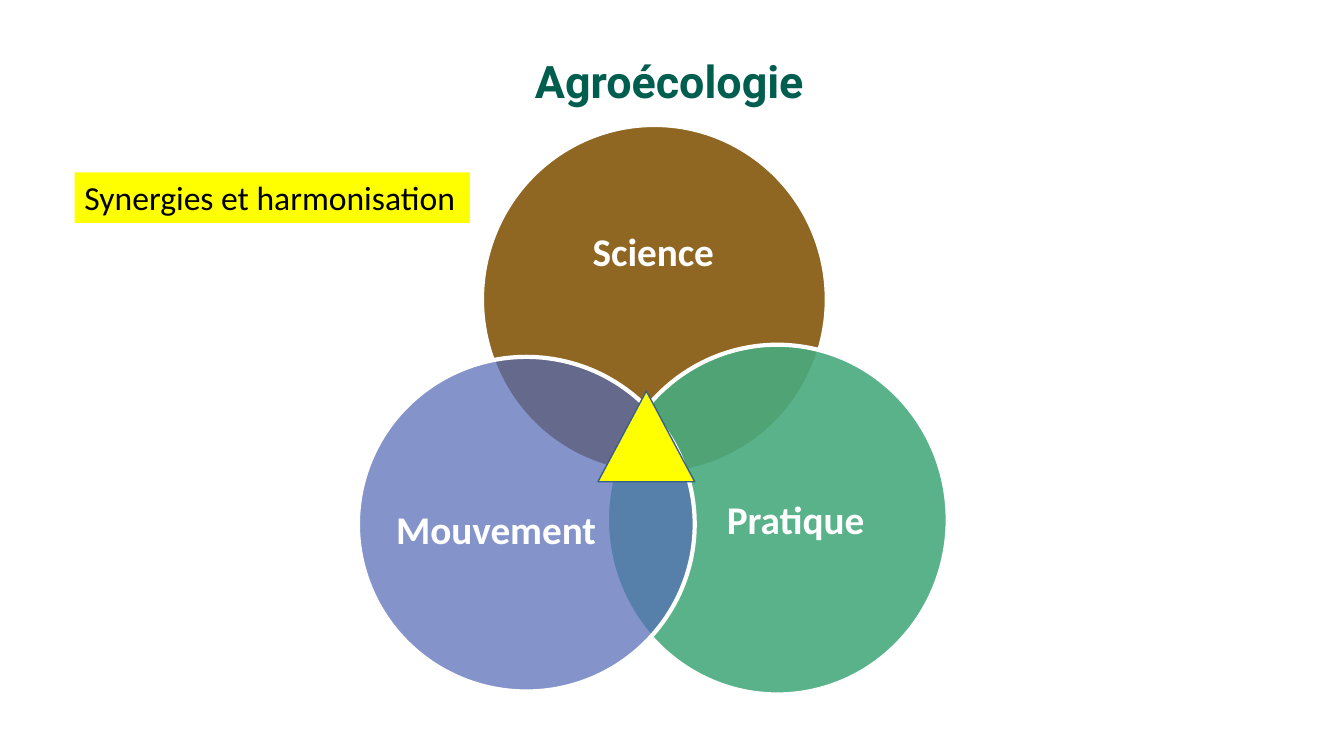
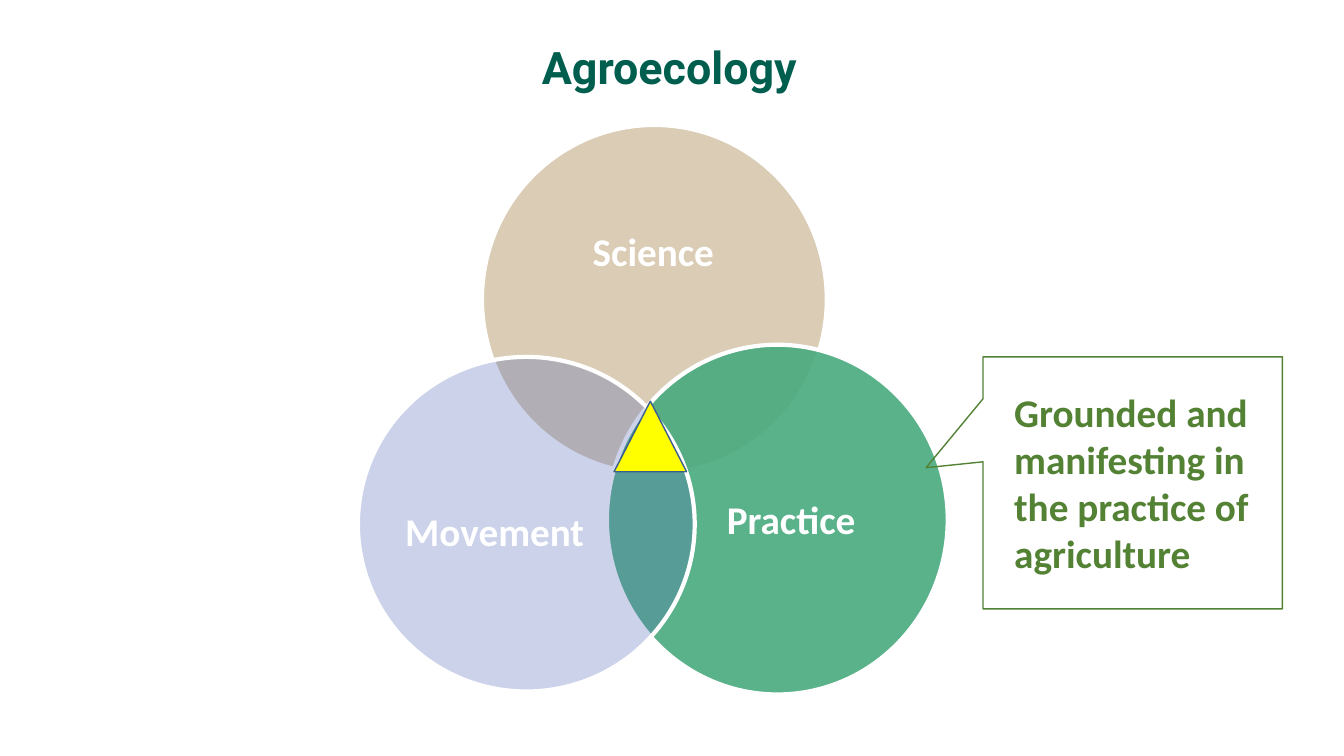
from pptx import Presentation
from pptx import util as u
from pptx.dml.color import RGBColor
from pptx.enum import shapes, text
from pptx.oxml.ns import qn
from lxml import etree

WIDE, HIGH = u.Inches(13.33), u.Inches(7.5)
KIND = shapes.MSO_SHAPE
LEFT, MID = text.PP_ALIGN.LEFT, text.PP_ALIGN.CENTER
TOP = text.MSO_ANCHOR.TOP
HUES = {
    "title": "005E4F", "white": "FFFFFF", "black": "000000",
    "brown": "85570B", "green": "48AA7E", "blue": "556CB7",
    "yellow": "FFFF00", "edge": "3A5F8C", "leaf": "548235",
}
# Boxes are left, top, width, height in percent of the slide.
RINGS = {
    "science": ((35.86, 16.53, 25.66, 46.13), "brown"),
    "practice": ((45.16, 45.6, 25.36, 46.27), "green"),
    "movement": ((26.63, 47.2, 25.06, 44.27), "blue"),
}


def hue(name):
    return RGBColor.from_string(HUES[name])


def place(box):
    x, y, w, h = box
    return [int(share * full / 100)
            for share, full in zip((x, y, w, h), (WIDE, HIGH, WIDE, HIGH))]


def write(shape, words, size=28, color="white", bold=True, align=LEFT,
          font="Calibri", anchor=TOP, wrap=True, inset=(0.1, 0.05), lead=None):
    frame = shape.text_frame
    frame.word_wrap = wrap
    frame.auto_size = text.MSO_AUTO_SIZE.NONE
    frame.vertical_anchor = anchor
    frame.margin_left, frame.margin_top = map(u.Inches, inset)
    frame.text = words
    para = frame.paragraphs[0]
    para.alignment = align
    if lead:
        para.line_spacing = lead
    face = para.font
    face.name, face.size, face.bold = font, u.Pt(size), bold
    face.color.rgb = hue(color)


def draw(slide, kind, box, fill=None, line=None, width=1, alpha=100):
    """Add a preset shape; alpha is the opacity of its fill in percent."""
    shape = slide.shapes.add_shape(kind, *place(box))
    shape.shadow.inherit = False
    if fill:
        shape.fill.solid()
        shape.fill.fore_color.rgb = hue(fill)
        if alpha < 100:
            tint = shape.fill._xPr.find(".//" + qn("a:srgbClr"))
            etree.SubElement(tint, qn("a:alpha"), val=str(alpha * 1000))
    else:
        shape.fill.background()
    if line:
        shape.line.color.rgb = hue(line)
        shape.line.width = u.Pt(width)
    else:
        shape.line.fill.background()
    return shape


def start(deck, title, top):
    slide = deck.slides.add_slide(deck.slide_layouts[5])
    head = slide.shapes.title
    head.left, head.top, head.width, head.height = place((4.65, top, 90.32, 10.93))
    write(head, title, size=32, color="title", align=MID, font="Roboto",
          anchor=text.MSO_ANCHOR.MIDDLE, lead=0.9)
    return slide


def venn(slide, parts):
    """Draw the rings in order; parts maps each to opacity, word, label spot."""
    for key, (alpha, word, spot, align) in parts.items():
        box, fill = RINGS[key]
        draw(slide, KIND.OVAL, box, fill, "white", 3, alpha)
        label = slide.shapes.add_textbox(*place((*spot, 7.6)))
        write(label, word, align=align)


def core(slide, box):
    draw(slide, KIND.FLOWCHART_EXTRACT, box, "yellow", "edge")


def french(deck):
    slide = start(deck, "Agroécologie", 5.6)
    venn(slide, {
        "science": (90, "Science", (40.66, 29.47, 15.9), MID),
        "practice": (90, "Pratique", (53.34, 64.8, 15.23), LEFT),
        "movement": (72, "Mouvement", (28.73, 66.13, 20.86), LEFT),
    })
    core(slide, (44.49, 51.73, 7.2, 12))
    band = draw(slide, KIND.RECTANGLE, (5.55, 22.8, 29.41, 6.67), "yellow")
    write(band, "Synergies et harmonisation", size=24, color="black",
          bold=False, wrap=False)


def english(deck):
    slide = start(deck, "Agroecology", 3.73)
    venn(slide, {
        "science": (30, "Science", (40.66, 29.47, 15.9), MID),
        "practice": (90, "Practice", (53.34, 64.8, 15.23), LEFT),
        "movement": (30, "Movement", (29.41, 66.4, 20.86), LEFT),
    })
    note = draw(slide, KIND.RECTANGULAR_CALLOUT, (73.14, 47.2, 22.28, 33.33),
                line="leaf")
    note.adjustments[0], note.adjustments[1] = -0.69, -0.06
    write(note, "Grounded and manifesting in the practice of agriculture",
          color="leaf", inset=(0.31, 0.31))
    core(slide, (45.69, 53.07, 5.4, 9.33))


def main():
    deck = Presentation()
    deck.slide_width, deck.slide_height = WIDE, HIGH
    french(deck)
    english(deck)
    deck.save("out.pptx")


if __name__ == "__main__":
    main()
